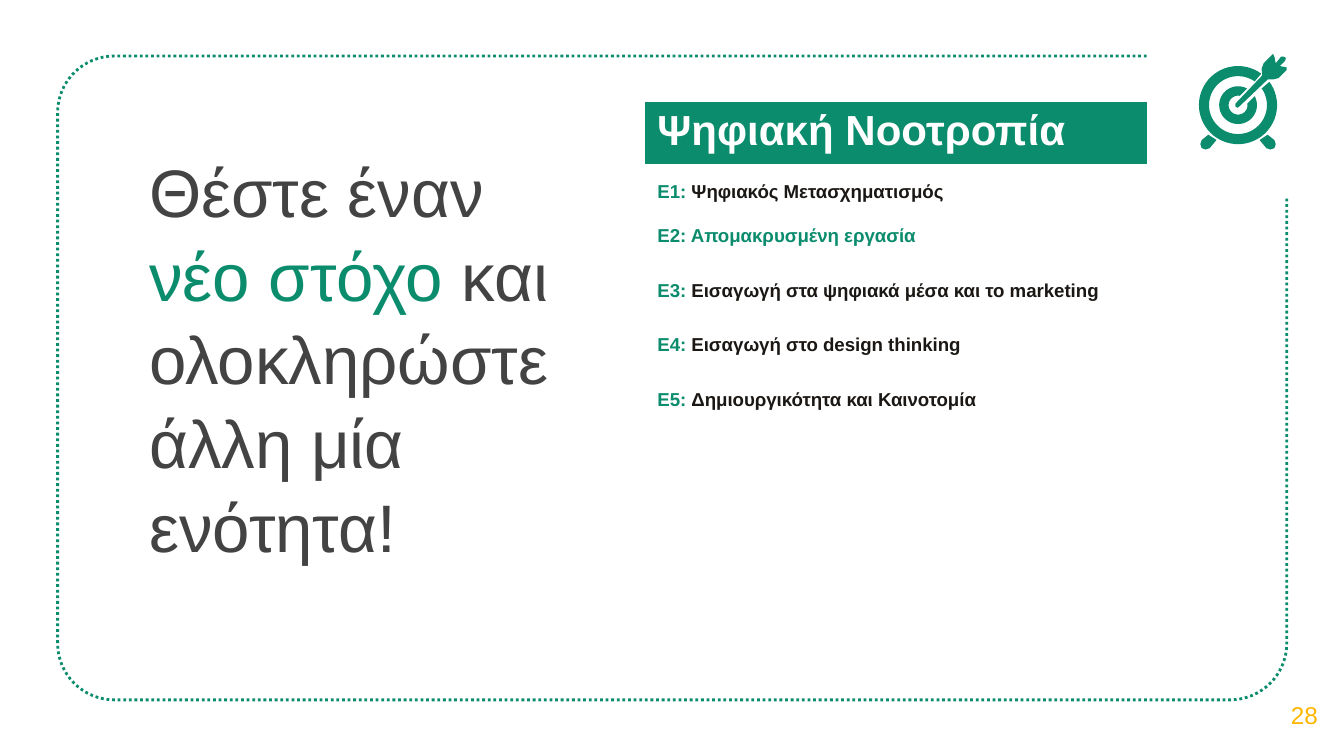
import math
from dataclasses import dataclass

from pptx import Presentation
from pptx import util as u
from pptx.dml.color import RGBColor
from pptx.enum import dml, text


@dataclass(frozen=True)
class Theme:
    font: str = "Arial"
    green: str = "0A8C6D"
    gray: str = "434343"
    ink: str = "1A1714"
    white: str = "FFFFFF"
    amber: str = "FFB600"
    title: float = 36
    header: float = 22.5
    number: float = 13
    body: float = 10


T = Theme()


def rgb(color):
    return RGBColor.from_string(color)


def add_run(p, content, *, size, color, bold=False):
    r = p.add_run()
    r.text = content
    r.font.name = T.font
    r.font.size = u.Pt(size)
    r.font.bold = bold
    r.font.color.rgb = rgb(color)


def arc(cx, cy, radius, start, end, steps):
    angles = (math.radians(start + (end - start) * i / steps) for i in range(steps + 1))
    return [(cx + radius * math.cos(a), cy + radius * math.sin(a)) for a in angles]


def add_outline(s, points, close=True):
    first, *rest = [(u.Cm(x), u.Cm(y)) for x, y in points]
    builder = s.shapes.build_freeform(*first)
    builder.add_line_segments(rest, close=close)
    sp = builder.convert_to_shape()
    sp.shadow.inherit = False
    return sp


def add_text_box(s, x, y, w, h):
    box = s.shapes.add_textbox(u.Cm(x), u.Cm(y), u.Cm(w), u.Cm(h))
    tf = box.text_frame
    tf.word_wrap = True
    tf.margin_left = tf.margin_right = tf.margin_top = tf.margin_bottom = u.Cm(0.25)
    return tf


def draw_frame(s, x, y, w, h, radius=1.07, gap=2.65):
    left, right = x + radius, x + w - radius
    top, bottom = y + radius, y + h - radius
    points = [
        (x + w - gap, y),
        *arc(left, top, radius, 270, 180, 16),
        *arc(left, bottom, radius, 180, 90, 16),
        *arc(right, bottom, radius, 90, 0, 16),
        (x + w, y + gap),
    ]
    sp = add_outline(s, points, close=False)
    sp.fill.background()
    sp.line.color.rgb = rgb(T.green)
    sp.line.width = u.Pt(1.5)
    sp.line.dash_style = dml.MSO_LINE.ROUND_DOT


def draw_target(s, x, y, w):
    cx, cy, aim = 29, 38, -45

    def ring(outer, inner, outer_gap, inner_gap):
        return (arc(cx, cy, outer, aim + outer_gap, aim + 360 - outer_gap, 60)
                + arc(cx, cy, inner, aim + 360 - inner_gap, aim + inner_gap, 60))

    foot = [(7, 60), (2, 64), (1, 67), (2, 70), (5, 71), (8, 70), (13, 64)]
    arrow = [(55, 0), (54, 1), (48, 7), (46.5, 11), (47, 16), (27, 37), (27, 39),
             (28.5, 40), (30, 39), (51, 19), (55, 19), (59, 18), (65, 12), (65, 10),
             (60, 9), (64, 5), (64.5, 3), (63, 2), (61, 2), (57, 7), (56, 2)]
    parts = [
        ring(29, 21.5, 8.5, 10),
        ring(14, 7, 16.5, 35),
        foot,
        [(2 * cx - px, py) for px, py in foot],
        arrow,
    ]
    scale = w / 66
    for part in parts:
        sp = add_outline(s, [(x + px * scale, y + py * scale) for px, py in part])
        sp.fill.solid()
        sp.fill.fore_color.rgb = rgb(T.green)
        sp.line.fill.background()


def draw_title(s, x, y, w, h):
    tf = add_text_box(s, x, y, w, h)
    p = tf.paragraphs[0]
    p.line_spacing = 1.04
    for content, color in [("Θέστε έναν ", T.gray), ("νέο στόχο ", T.green),
                           ("και ολοκληρώστε άλλη μία ενότητα!", T.gray)]:
        add_run(p, content, size=T.title, color=color)


def draw_number(s, x, y, w, h, number):
    tf = add_text_box(s, x, y, w, h)
    tf.vertical_anchor = text.MSO_ANCHOR.MIDDLE
    p = tf.paragraphs[0]
    p.alignment = text.PP_ALIGN.CENTER
    add_run(p, number, size=T.number, color=T.amber)


def draw_units(s, x, y, w, h, heading, units):
    count = len(units) + 1
    table = s.shapes.add_table(count, 1, u.Cm(x), u.Cm(y), u.Cm(w), u.Cm(h)).table
    table.horz_banding = False
    for row in table.rows:
        row.height = u.Cm(h / count)

    header = table.cell(0, 0)
    header.fill.solid()
    header.fill.fore_color.rgb = rgb(T.green)
    add_run(header.text_frame.paragraphs[0], heading,
            size=T.header, color=T.white, bold=True)

    for i, (name, color) in enumerate(units, 1):
        cell = table.cell(i, 0)
        cell.fill.background()
        p = cell.text_frame.paragraphs[0]
        add_run(p, f"Ε{i}: ", size=T.body, color=T.green, bold=True)
        add_run(p, name, size=T.body, color=color, bold=True)
    table.cell(1, 0).vertical_anchor = text.MSO_ANCHOR.MIDDLE


def main():
    prs = Presentation()
    prs.slide_width, prs.slide_height = u.Cm(25.4), u.Cm(14.29)
    s = prs.slides.add_slide(prs.slide_layouts[6])
    draw_frame(s, 1.09, 1.06, 23.23, 12.17)
    draw_title(s, 2.57, 2.53, 8.31, 2.39)
    draw_number(s, 23.9, 12.75, 1.5, 1.52, "28")
    draw_target(s, 22.66, 1.02, 1.68)
    draw_units(s, 12.17, 1.91, 9.53, 6.18, "Ψηφιακή Νοοτροπία", [
        ("Ψηφιακός Μετασχηματισμός", T.ink),
        ("Απομακρυσμένη εργασία", T.green),
        ("Εισαγωγή στα ψηφιακά μέσα και το marketing", T.ink),
        ("Εισαγωγή στο design thinking", T.ink),
        ("Δημιουργικότητα και Καινοτομία", T.ink),
    ])
    prs.save("out.pptx")


if __name__ == "__main__":
    main()
